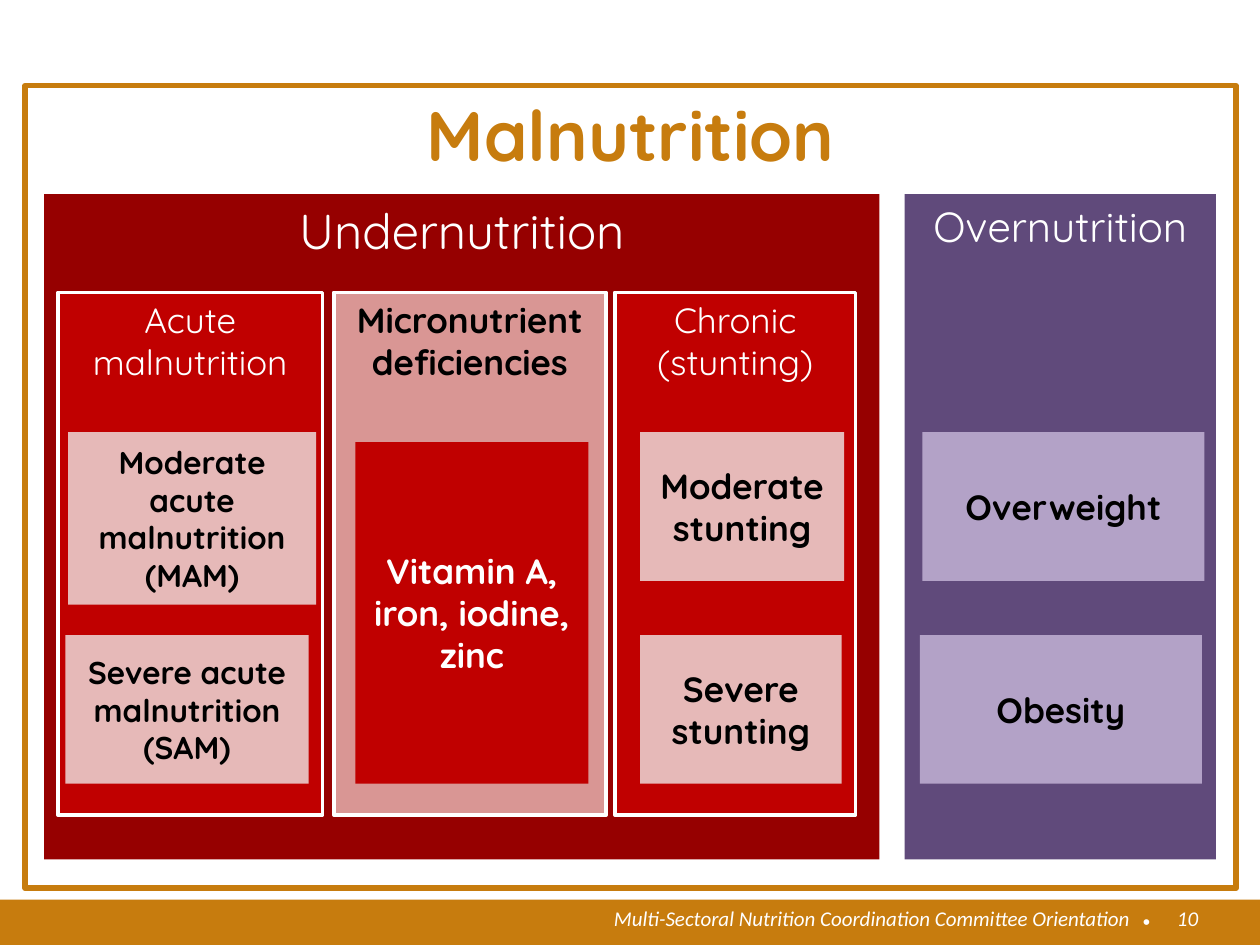
from dataclasses import dataclass

from pptx import Presentation
from pptx.dml.color import RGBColor
from pptx.enum.shapes import MSO_SHAPE
from pptx.enum.text import MSO_ANCHOR, PP_ALIGN
from pptx.util import Inches, Pt

RECTANGLE = MSO_SHAPE.RECTANGLE
TOP, MIDDLE = MSO_ANCHOR.TOP, MSO_ANCHOR.MIDDLE
LEFT, CENTER, RIGHT = PP_ALIGN.LEFT, PP_ALIGN.CENTER, PP_ALIGN.RIGHT


@dataclass(frozen=True)
class Theme:
    white: str = "FFFFFF"
    black: str = "000000"
    ochre: str = "C77C0E"
    dark_red: str = "960000"
    red: str = "C00000"
    rose: str = "D99694"
    pale_rose: str = "E6B9B8"
    purple: str = "604A7B"
    lavender: str = "B3A2C7"
    font: str = "Quicksand"
    footer_font: str = "Calibri"
    bullet_font: str = "Arial"
    title: int = 40
    heading: int = 28
    side_heading: int = 24
    body: int = 20
    small: int = 18
    footer: int = 12


class SlideBuilder:
    def __init__(self, slide, theme):
        self.slide = slide
        self.theme = theme

    def add_text(self, frame, text, size, color, font, align, bold=False, italic=False):
        frame.word_wrap = True
        paragraph = frame.paragraphs[0]
        paragraph.alignment = align
        run = paragraph.add_run()
        run.text = text
        run.font.name = font
        run.font.size = Pt(size)
        run.font.bold = bold
        run.font.italic = italic
        run.font.color.rgb = RGBColor.from_string(color)

    def box(self, bounds, fill, line=None, line_width=2):
        shape = self.slide.shapes.add_shape(RECTANGLE, *map(Inches, bounds))
        shape.shadow.inherit = False
        shape.fill.solid()
        shape.fill.fore_color.rgb = RGBColor.from_string(fill)
        if line:
            shape.line.color.rgb = RGBColor.from_string(line)
            shape.line.width = Pt(line_width)
        else:
            shape.line.fill.background()
        return shape

    def panel(self, bounds, text, fill, color, size, bold=False, line=None, line_width=2):
        """Box with its heading at the top."""
        frame = self.box(bounds, fill, line, line_width).text_frame
        frame.vertical_anchor = TOP
        self.add_text(frame, text, size, color, self.theme.font, CENTER, bold)

    def card(self, bounds, text, fill, color, size):
        """Box with bold text in its middle."""
        frame = self.box(bounds, fill).text_frame
        frame.vertical_anchor = MIDDLE
        self.add_text(frame, text, size, color, self.theme.font, CENTER, bold=True)

    def footer_text(self, bounds, text, font, align, italic):
        frame = self.slide.shapes.add_textbox(*map(Inches, bounds)).text_frame
        frame.margin_left = frame.margin_right = 0
        frame.margin_top = frame.margin_bottom = 0
        self.add_text(frame, text, self.theme.footer, self.theme.white, font, align,
                      italic=italic)


def main():
    presentation = Presentation()
    presentation.slide_width = Inches(10)
    presentation.slide_height = Inches(7.5)
    slide = presentation.slides.add_slide(presentation.slide_layouts[6])
    theme = Theme()
    builder = SlideBuilder(slide, theme)

    # Footer band
    builder.box((0, 7.14, 10, 0.36), theme.ochre)
    builder.footer_text((9.18, 7.19, 0.33, 0.32), "10", theme.footer_font, RIGHT, True)
    builder.footer_text((4.84, 7.19, 4.13, 0.4),
                        "Multi-Sectoral Nutrition Coordination Committee Orientation",
                        theme.footer_font, RIGHT, True)
    builder.footer_text((9.07, 7.21, 0.18, 0.2), "•", theme.bullet_font, LEFT, False)

    # Outer frame with the title
    builder.panel((0.2, 0.68, 9.61, 6.37), "Malnutrition", theme.white, theme.ochre,
                  theme.title, bold=True, line=theme.ochre, line_width=3.25)

    # The two main forms
    main_top, main_height = 1.54, 5.28
    builder.panel((0.35, main_top, 6.63, main_height), "Undernutrition",
                  theme.dark_red, theme.white, theme.heading)
    builder.panel((7.18, main_top, 2.47, main_height), "Overnutrition",
                  theme.purple, theme.white, theme.side_heading)

    # Columns of undernutrition
    columns = [
        (0.46, 2.1, "Acute malnutrition", theme.red, theme.white, False),
        (2.65, 2.16, "Micronutrient deficiencies", theme.rose, theme.black, True),
        (4.88, 1.91, "Chronic (stunting)", theme.red, theme.white, False),
    ]
    for left, width, text, fill, color, bold in columns:
        builder.panel((left, 2.32, width, 4.15), text, fill, color, theme.body,
                      bold, line=theme.white)

    # Cards: moderate forms in the upper row, severe forms in the lower row
    upper, lower, height = 3.43, 5.04, 1.18
    cards = [
        ((7.32, upper, 2.24, height), "Overweight", theme.lavender, theme.black, theme.body),
        ((7.3, lower, 2.24, height), "Obesity", theme.lavender, theme.black, theme.body),
        ((5.08, upper, 1.62, height), "Moderate stunting",
         theme.pale_rose, theme.black, theme.body),
        ((5.08, lower, 1.6, height), "Severe stunting",
         theme.pale_rose, theme.black, theme.body),
        ((2.82, 3.51, 1.85, 2.71), "Vitamin A, iron, iodine, zinc",
         theme.red, theme.white, theme.body),
        ((0.54, upper, 1.97, 1.37), "Moderate acute malnutrition (MAM)",
         theme.pale_rose, theme.black, theme.small),
        ((0.52, lower, 1.93, height), "Severe acute malnutrition (SAM)",
         theme.pale_rose, theme.black, theme.small),
    ]
    for card in cards:
        builder.card(*card)

    presentation.save("out.pptx")


if __name__ == "__main__":
    main()
